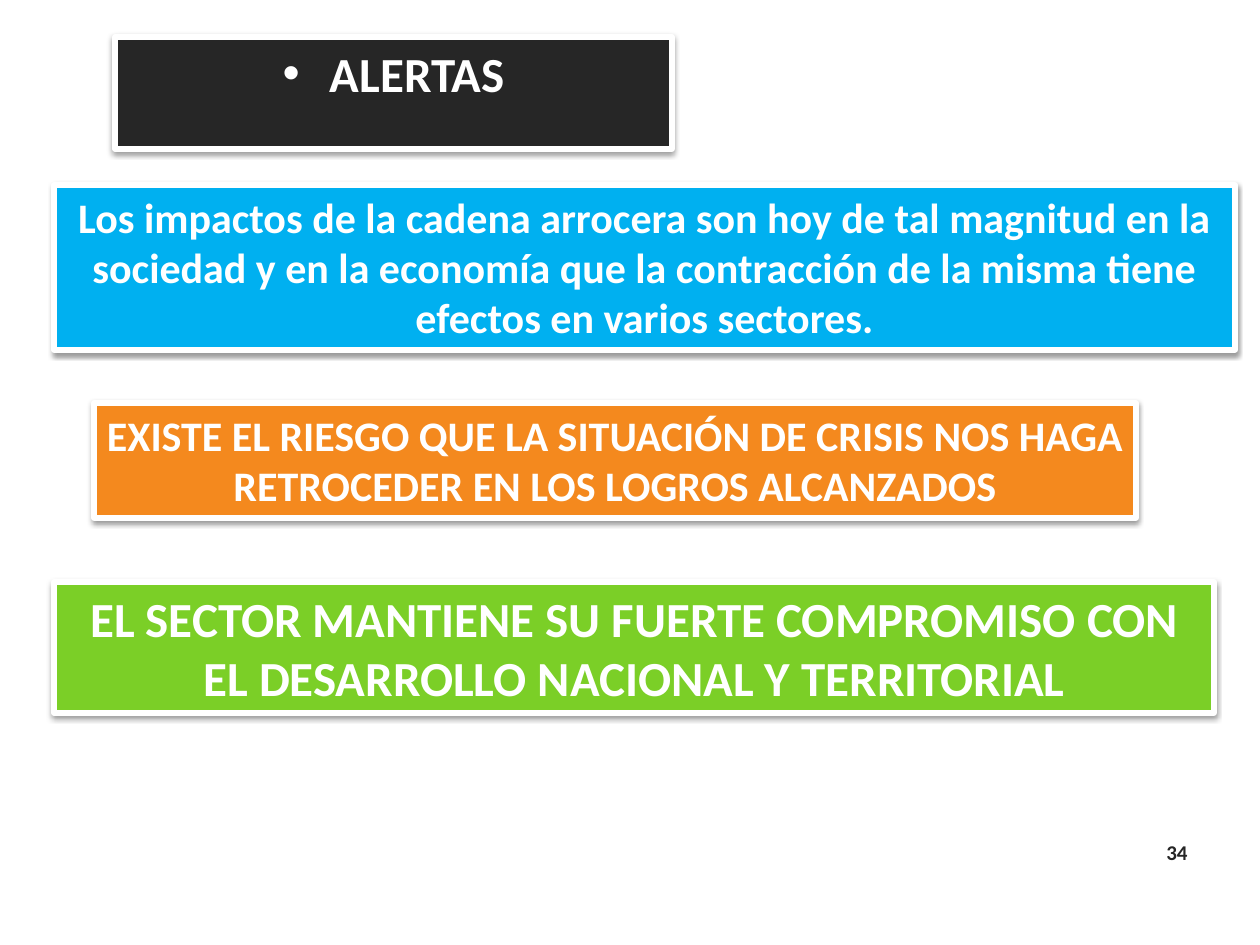
from dataclasses import dataclass

from lxml import etree
from pptx import Presentation
from pptx.dml.color import RGBColor
from pptx.enum.shapes import MSO_SHAPE
from pptx.enum.text import MSO_ANCHOR, MSO_AUTO_SIZE, PP_ALIGN
from pptx.oxml.ns import qn
from pptx.util import Emu, Inches, Pt

RECTANGLE = MSO_SHAPE.RECTANGLE
CENTER, RIGHT = PP_ALIGN.CENTER, PP_ALIGN.RIGHT
TOP, MIDDLE = MSO_ANCHOR.TOP, MSO_ANCHOR.MIDDLE
FIT_SHAPE, NO_FIT = MSO_AUTO_SIZE.SHAPE_TO_FIT_TEXT, MSO_AUTO_SIZE.NONE

PX_PER_INCH = 126
COLORS = {
    "white": "FFFFFF",
    "charcoal": "262626",
    "blue": "00B0F0",
    "orange": "F4891E",
    "green": "7BCF27",
    "shadow": "000000",
}


@dataclass(frozen=True)
class Box:
    left: int
    top: int
    width: int
    height: int

    def emu(self) -> list[Emu]:
        lengths = (self.left, self.top, self.width, self.height)
        return [Emu(round(Inches(px) / PX_PER_INCH)) for px in lengths]


@dataclass(frozen=True)
class Banner:
    box: Box
    color: str
    size: int
    text: str


HEADING = Banner(Box(115, 37, 557, 112), "charcoal", 28, "ALERTAS")
ALERTS = [
    Banner(Box(54, 185, 1181, 165), "blue", 24,
           "Los impactos de la cadena arrocera son hoy de tal magnitud en la "
           "sociedad y en la economía que la contracción de la misma tiene "
           "efectos en varios sectores."),
    Banner(Box(94, 403, 1042, 115), "orange", 24,
           "EXISTE EL RIESGO QUE LA SITUACIÓN DE CRISIS NOS HAGA "
           "RETROCEDER EN LOS LOGROS ALCANZADOS"),
    Banner(Box(54, 582, 1160, 131), "green", 28,
           "EL SECTOR MANTIENE SU FUERTE COMPROMISO CON "
           "EL DESARROLLO NACIONAL Y TERRITORIAL"),
]
PAGE_NUMBER_BOX = Box(906, 827, 294, 50)


def rgb(name: str) -> RGBColor:
    return RGBColor.from_string(COLORS[name])


def write(shape, text: str, size: int, color: str, align, anchor, fit) -> None:
    frame = shape.text_frame
    frame.text = text
    frame_format = {"word_wrap": True, "auto_size": fit, "vertical_anchor": anchor}
    for name, value in frame_format.items():
        setattr(frame, name, value)
    paragraph = frame.paragraphs[0]
    paragraph.alignment = align
    paragraph.space_before = Pt(0)
    font = paragraph.runs[0].font
    font_format = {"name": "Calibri", "size": Pt(size), "bold": True}
    for name, value in font_format.items():
        setattr(font, name, value)
    font.color.rgb = rgb(color)


def add_drop_shadow(shape) -> None:
    shape.shadow.inherit = False
    effects = shape.element.spPr.find(qn("a:effectLst"))
    shadow = etree.SubElement(
        effects, qn("a:outerShdw"), blurRad=str(Pt(3.1)), dist=str(Pt(1.6)),
        dir="5400000", rotWithShape="0")
    color = etree.SubElement(shadow, qn("a:srgbClr"), val=COLORS["shadow"])
    etree.SubElement(color, qn("a:alpha"), val="38000")


def style_banner(shape, banner: Banner, fit) -> None:
    shape.fill.solid()
    shape.fill.fore_color.rgb = rgb(banner.color)
    shape.line.color.rgb = rgb("white")
    shape.line.width = Pt(3)
    add_drop_shadow(shape)
    write(shape, banner.text, banner.size, "white", CENTER, TOP, fit)


def main() -> None:
    prs = Presentation()
    prs.slide_width, prs.slide_height = Inches(10), Inches(7.5)
    slide = prs.slides.add_slide(prs.slide_layouts[1])
    title, heading = slide.placeholders
    title.element.getparent().remove(title.element)

    heading.left, heading.top, heading.width, heading.height = HEADING.box.emu()
    style_banner(heading, HEADING, NO_FIT)

    for alert in ALERTS:
        style_banner(slide.shapes.add_shape(RECTANGLE, *alert.box.emu()), alert, FIT_SHAPE)

    page_number = slide.shapes.add_textbox(*PAGE_NUMBER_BOX.emu())
    write(page_number, "34", 12, "charcoal", RIGHT, MIDDLE, NO_FIT)
    prs.save("out.pptx")


if __name__ == "__main__":
    main()
